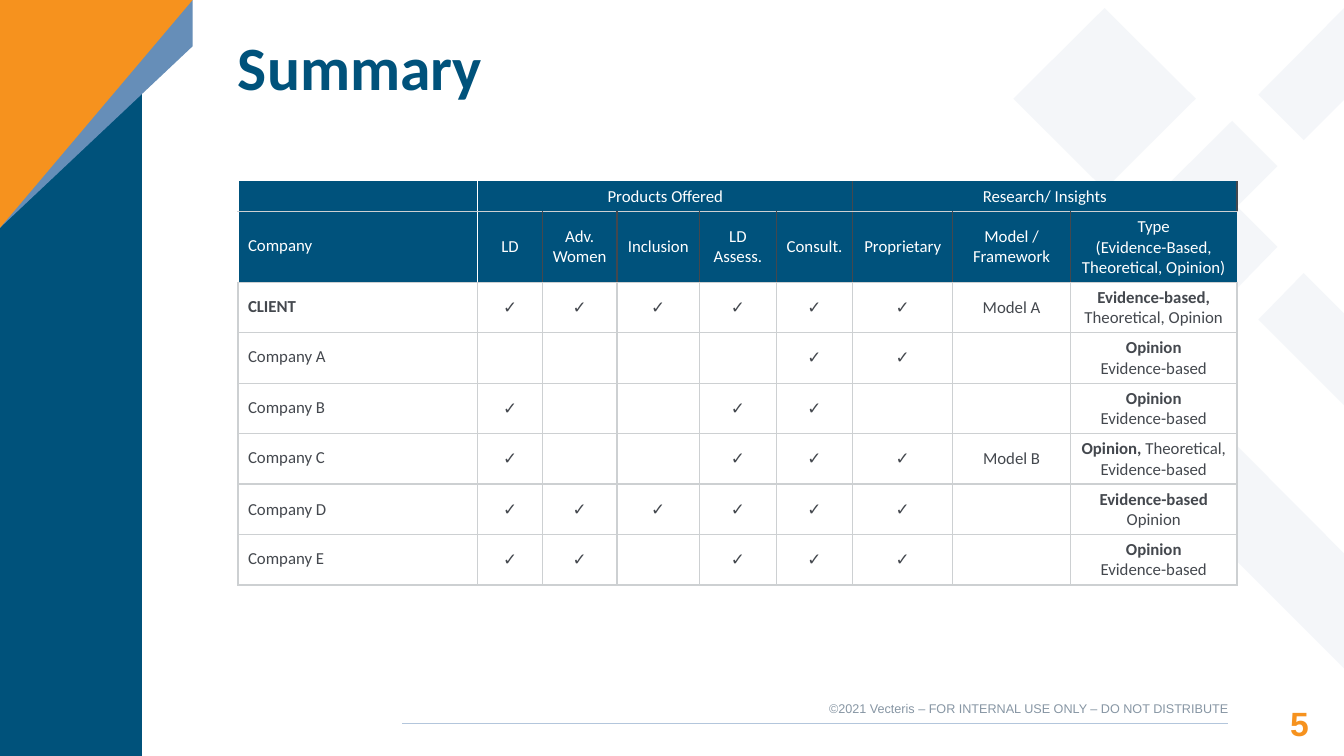
from lxml.etree import SubElement
from pptx import Presentation
from pptx.dml.color import RGBColor
from pptx.enum.shapes import MSO_CONNECTOR, MSO_SHAPE
from pptx.enum.text import MSO_ANCHOR as Anchor, PP_ALIGN as Align
from pptx.oxml import parse_xml
from pptx.oxml.ns import nsdecls, qn
from pptx.util import Inches, Pt

NAVY, HEADER, ORANGE, BLUE = "00527B", "00527C", "F6921E", "668EB8"
WHITE, INK, GRID, PALE = "FFFFFF", "44484E", "CDD0D2", "E9EEF4"


def paint(target, colour, alpha=None):
    """Give a shape or cell a solid fill, and leave a shape without outline."""
    target.fill.solid()
    target.fill.fore_color.rgb = RGBColor.from_string(colour)
    if hasattr(target, "line"):
        target.line.fill.background()
        target.shadow.inherit = False
    if alpha:
        solid = target._element.spPr.find(qn("a:solidFill"))
        SubElement(solid[0], qn("a:alpha"), val=str(alpha * 1000))


def add_span(para, text, **formats):
    """Add a run; formats are font attributes, plus colour."""
    span = para.add_run()
    span.text = text
    span.font.color.rgb = RGBColor.from_string(formats.pop("colour"))
    for name, value in formats.items():
        setattr(span.font, name, value)


deck = Presentation()
deck.slide_width, deck.slide_height = Inches(13.33), Inches(7.5)
page = deck.slides.add_slide(deck.slide_layouts[5])
shapes = page.shapes

# Background bars and corner shapes
outlines = [
    (PALE, 49, [(12.22, 1.2), (11.36, 2.05), (12.22, 2.91), (12.67, 2.45),
                (12.27, 2.05), (12.67, 1.65)]),
    (PALE, 49, [(11, 2.4), (10.05, 3.35), (13.33, 6.63), (13.33, 5.49),
                (11.2, 3.35), (11.57, 2.97)]),
    (PALE, 49, [(12.93, 2.71), (12.48, 3.17), (13.33, 4.02), (13.33, 3.11)]),
    (PALE, 49, [(13.33, 0.08), (12.48, 0.94), (12.93, 1.39), (13.33, 0.99)]),
    (NAVY, None, [(0, 0), (1.41, 0), (1.41, 7.5), (0, 7.5)]),
    (BLUE, None, [(1.91, 0), (0, 0), (0, 2.26), (1.91, 0.46)]),
    (ORANGE, None, [(1.91, 0), (0, 0), (0, 2.26)]),
]
for colour, alpha, points in outlines:
    corners = [(Inches(x), Inches(y)) for x, y in points]
    builder = shapes.build_freeform(*corners[0], scale=1)
    builder.add_line_segments(corners[1:], close=True)
    paint(builder.convert_to_shape(), colour, alpha)

diamond = shapes.add_shape(MSO_SHAPE.DIAMOND, Inches(10.05), Inches(0.08),
                           Inches(1.81), Inches(1.8))
paint(diamond, PALE, 49)

# Title
title = shapes.title
title.left, title.top = Inches(2.36), Inches(0.35)
title.width, title.height = Inches(9.58), Inches(0.68)
frame = title.text_frame
frame.margin_left = frame.margin_right = frame.margin_bottom = 0
frame.margin_top = Inches(0.01)
frame.vertical_anchor = Anchor.MIDDLE
para = frame.paragraphs[0]
para.alignment, para.line_spacing = Align.LEFT, 0.9
add_span(para, "Summary", colour=NAVY, name="Calibri", size=Pt(44), bold=True)

# Footer rule, page number and copyright line
rule = shapes.add_connector(MSO_CONNECTOR.STRAIGHT, Inches(3.99), Inches(7.18),
                            Inches(12.18), Inches(7.18))
rule.line.color.rgb = RGBColor.from_string("B3C6DC")
rule.line.width = Pt(0.82)
SubElement(rule._element.spPr, qn("a:effectLst"))

footers = [
    ("5", (12.18, 6.9, 0.8, 0.38), 1.19,
     {"size": Pt(24), "colour": ORANGE, "bold": True}),
    ("©2021 Vecteris – FOR INTERNAL USE ONLY – DO NOT DISTRIBUTE",
     (7.92, 6.95, 4.26, 0.15), 1, {"size": Pt(9), "colour": "8796A4"}),
]
for text, place, spacing, formats in footers:
    box = shapes.add_textbox(*map(Inches, place))
    frame = box.text_frame
    frame.word_wrap = True
    for side in ("left", "top", "right", "bottom"):
        setattr(frame, f"margin_{side}", 0)
    para = frame.paragraphs[0]
    para.alignment, para.line_spacing = Align.RIGHT, spacing
    add_span(para, text, name="Arial", **formats)

# Table content: a cell is a list of paragraphs, a paragraph a list of (text, bold)
heads = ["Company", "LD", "Adv. Women", "Inclusion", "LD Assess.", "Consult.",
         "Proprietary", "Model / Framework"]
type_head = [[("Type", False)], [("(Evidence-Based, Theoretical, Opinion)", False)]]
opinion_first = [[("Opinion", True)], [("Evidence-based", False)]]
companies = [  # name, ticked columns, model, type
    ("CLIENT", "123456", "Model A",
     [[("Evidence-based, ", True), ("Theoretical, Opinion", False)]]),
    ("Company A", "56", "", opinion_first),
    ("Company B", "145", "", opinion_first),
    ("Company C", "1456", "Model B",
     [[("Opinion, ", True), ("Theoretical,", False)], [("Evidence-based", False)]]),
    ("Company D", "123456", "",
     [[("Evidence-based", True)], [("Opinion", False)]]),
    ("Company E", "12456", "", opinion_first),
]
top_row = ["", "Products Offered", "", "", "", "", "Research/ Insights", "", ""]
rows = [[[[(text, False)]] for text in top_row],
        [[[(text, False)]] for text in heads] + [type_head]]
for name, ticks, model, kind in companies:
    marks = ["✓" if str(col) in ticks else "" for col in range(1, 7)]
    cells = [[[(text, False)]] for text in marks + [model]]
    rows.append([[[(name, name == "CLIENT")]]] + cells + [kind])

# Table grid
widths = [2.38, 0.64, 0.74, 0.82, 0.76, 0.76, 0.99, 1.17, 1.65]
heights = [0.3, 0.7] + [0.5] * len(companies)
last = len(widths) - 1
table = shapes.add_table(len(rows), len(widths), Inches(2.36), Inches(1.8),
                         Inches(sum(widths)), Inches(sum(heights))).table
table.first_row = table.horz_banding = False
for column, width in zip(table.columns, widths):
    column.width = Inches(width)
for row, height in zip(table.rows, heights):
    row.height = Inches(height)
table.cell(0, 1).merge(table.cell(0, 5))
table.cell(0, 6).merge(table.cell(0, 8))

# Table cells
for r, row in enumerate(rows):
    for c, paragraphs in enumerate(row):
        cell = table.cell(r, c)
        header = r < 2
        paint(cell, HEADER if header else WHITE)
        cell.vertical_anchor = Anchor.MIDDLE
        for number, spans in enumerate(paragraphs):
            frame = cell.text_frame
            para = frame.add_paragraph() if number else frame.paragraphs[0]
            para.alignment = Align.CENTER if c else Align.LEFT
            if c == 0 and row[0][0][0][0] != "Company D":
                para.line_spacing = Pt(13)
            for text, bold in spans:
                if text:
                    add_span(para, text, colour=WHITE if header else INK,
                             name="Calibri", size=Pt(12), bold=bold)
                else:
                    SubElement(para._p, qn("a:endParaRPr"), sz="1200")

        # Borders come before the fill in the cell properties
        edges = dict.fromkeys("LRTB", GRID)
        if header:
            edges["L"] = WHITE if c < 2 else INK
            edges["R"] = WHITE if c == 0 else None if c == last else INK
            edges["T"] = GRID if r else None
        for place, (side, colour) in enumerate(edges.items()):
            fill = (f'<a:solidFill><a:srgbClr val="{colour}"/></a:solidFill>'
                    if colour else "<a:noFill/>")
            edge = f'<a:ln{side} {nsdecls("a")} w="12700">{fill}</a:ln{side}>'
            cell._tc.get_or_add_tcPr().insert(place, parse_xml(edge))

deck.save("out.pptx")
